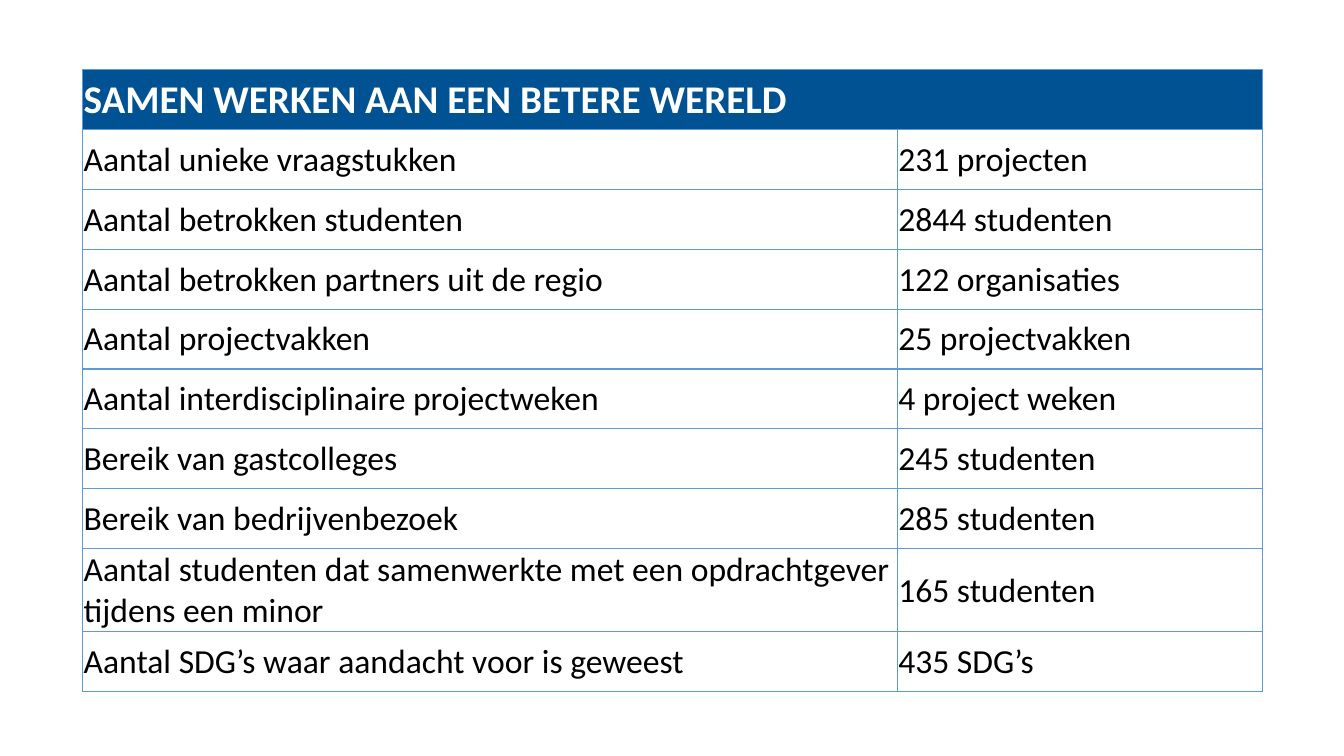
"""Builds a slide with a table of project results."""
from lxml import etree
from pptx import Presentation
from pptx import util as u
from pptx.dml.color import RGBColor
from pptx.enum import text
from pptx.oxml import ns

HEADER_BLUE = RGBColor(0x00, 0x52, 0x93)
BORDER_BLUE = RGBColor(0x5B, 0x9B, 0xD5)
WHITE = RGBColor(0xFF, 0xFF, 0xFF)
BLACK = RGBColor(0x00, 0x00, 0x00)

FONT = "Calibri"
LEFT, TOP, WIDTH, HEIGHT = 0.82, 0.69, 11.7, 6.17
LABEL_WIDTH = 8.08
TALL_ROW, TALL_HEIGHT = 8, 0.82

TITLE = "SAMEN WERKEN AAN EEN BETERE WERELD"
RESULTS = [
    ("Aantal unieke vraagstukken", "231 projecten"),
    ("Aantal betrokken studenten", "2844 studenten"),
    ("Aantal betrokken partners uit de regio", "122 organisaties"),
    ("Aantal projectvakken", "25 projectvakken"),
    ("Aantal interdisciplinaire projectweken", "4 project weken"),
    ("Bereik van gastcolleges", "245 studenten"),
    ("Bereik van bedrijvenbezoek", "285 studenten"),
    ("Aantal studenten dat samenwerkte met een opdrachtgever tijdens een minor",
     "165 studenten"),
    ("Aantal SDG’s waar aandacht voor is geweest", "435 SDG’s"),
]


def add_borders(cell):
    """Draw a thin line on all four sides of a cell."""
    properties = cell._tc.get_or_add_tcPr()
    for side in ("lnL", "lnR", "lnT", "lnB"):
        line = etree.SubElement(properties, ns.qn(f"a:{side}"), w=str(u.Pt(1)))
        fill = etree.SubElement(line, ns.qn("a:solidFill"))
        etree.SubElement(fill, ns.qn("a:srgbClr"), val=str(BORDER_BLUE))


def style_cell(cell, fill=None):
    """Set the borders, fill, margins and anchor of a cell."""
    add_borders(cell)
    if fill is None:
        cell.fill.background()
    else:
        cell.fill.solid()
        cell.fill.fore_color.rgb = fill
    cell.margin_left = cell.margin_right = cell.margin_top = u.Inches(0.01)
    cell.margin_bottom = 0
    cell.vertical_anchor = text.MSO_ANCHOR.MIDDLE


def write_cell(cell, words, size, color, bold=False):
    """Put words in a cell with the given font settings."""
    cell.text = words
    font = cell.text_frame.paragraphs[0].font
    font.name, font.size, font.bold = FONT, u.Pt(size), bold
    font.color.rgb = color


def add_results_table(page):
    """Add the table with its merged header and the result rows."""
    row_count = len(RESULTS) + 1
    frame = page.shapes.add_table(
        row_count, 2, *map(u.Inches, (LEFT, TOP, WIDTH, HEIGHT)))
    table = frame.table
    table.horz_banding = False
    table.columns[0].width = u.Inches(LABEL_WIDTH)
    table.columns[1].width = u.Inches(WIDTH - LABEL_WIDTH)
    row_height = (HEIGHT - TALL_HEIGHT) / (row_count - 1)
    for index, row in enumerate(table.rows):
        row.height = u.Inches(TALL_HEIGHT if index == TALL_ROW else row_height)
        for cell in row.cells:
            style_cell(cell, HEADER_BLUE if index == 0 else None)

    header = table.cell(0, 0)
    header.merge(table.cell(0, 1))
    write_cell(header, TITLE, 28, WHITE, bold=True)
    for index, result in enumerate(RESULTS, start=1):
        for column, words in enumerate(result):
            write_cell(table.cell(index, column), words, 24, BLACK)


def main():
    """Create and save the deck."""
    deck = Presentation()
    deck.slide_width, deck.slide_height = u.Inches(13.33), u.Inches(7.5)
    page = deck.slides.add_slide(deck.slide_layouts[6])
    add_results_table(page)
    deck.save("out.pptx")


if __name__ == "__main__":
    main()
